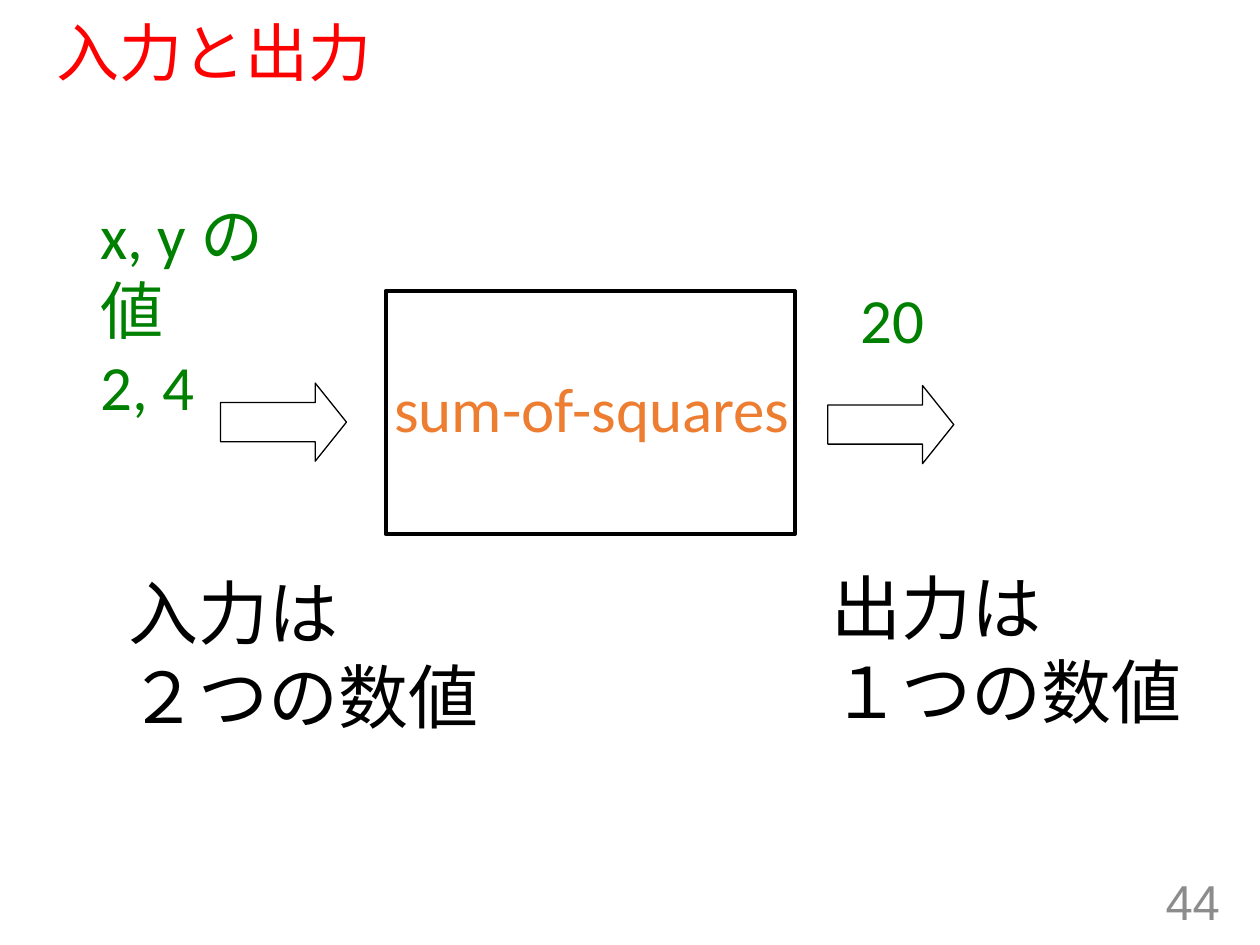
from pptx import Presentation
from pptx.util import Inches, Pt
from pptx.dml.color import RGBColor
from pptx.enum import shapes, text

BLACK = RGBColor(0x00, 0x00, 0x00)
RED = RGBColor(0xFF, 0x00, 0x00)
GREEN = RGBColor(0x00, 0x80, 0x00)
ORANGE = RGBColor(0xED, 0x7D, 0x31)
GRAY = RGBColor(0x8C, 0x8C, 0x8C)

# Content: lines, (left, top, width, height), size, colour, wrap
LABELS = [
    (["sum-of-squares"], (3.03, 2.88, 3.38, 0.71), 36, ORANGE, False),
    (["x, y の値", "2, 4"], (0.7, 1.51, 1.9, 1.3), 36, GREEN, True),
    (["20"], (6.73, 2.18, 0.71, 0.71), 36, GREEN, False),
    (["入力は", "２つの数値"], (0.92, 4.47, 3.01, 1.45), 40, BLACK, False),
    (["出力は", "１つの数値"], (6.5, 4.43, 3.01, 1.45), 40, BLACK, False),
]
TITLE = (["入力と出力"], (0.35, 0.19, 9.25, 0.51), 36, RED, True)
PAGE = (["44"], (7.53, 6.95, 2.25, 0.4), 28, GRAY, True)
FUNCTION_BOX = (3.06, 2.31, 3.25, 1.93)
ARROWS = [(1.75, 3.04, 1, 0.62), (6.57, 3.06, 1, 0.62)]


def add_outline(s, kind, box, width):
    sp = s.shapes.add_shape(kind, *map(Inches, box))
    sp.shadow.inherit = False
    sp.fill.background()
    sp.line.color.rgb = BLACK
    sp.line.width = Pt(width)
    return sp


def add_label(s, lines, box, size, color, wrap, font="Calibri"):
    tf = s.shapes.add_textbox(*map(Inches, box)).text_frame
    tf.word_wrap = wrap
    for i, line in enumerate(lines):
        p = tf.paragraphs[0] if i == 0 else tf.add_paragraph()
        r = p.add_run()
        r.text = line
        r.font.size = Pt(size)
        r.font.name = font
        r.font.color.rgb = color
    return tf


def main():
    prs = Presentation()
    prs.slide_width, prs.slide_height = Inches(10), Inches(7.5)
    s = prs.slides.add_slide(prs.slide_layouts[6])

    # Function box with an arrow in and an arrow out
    add_outline(s, shapes.MSO_SHAPE.RECTANGLE, FUNCTION_BOX, 2.25)
    for box in ARROWS:
        arrow = add_outline(s, shapes.MSO_SHAPE.RIGHT_ARROW, box, 0.75)
        arrow.adjustments[0] = 0.5
        arrow.adjustments[1] = 0.4

    # Values and captions
    for label in LABELS:
        add_label(s, *label)

    # Title and page number
    title = add_label(s, *TITLE, font="Arial")
    title.vertical_anchor = text.MSO_ANCHOR.MIDDLE
    title.paragraphs[0].line_spacing = 0.9
    page = add_label(s, *PAGE, font="Arial")
    page.vertical_anchor = text.MSO_ANCHOR.MIDDLE
    page.paragraphs[0].alignment = text.PP_ALIGN.RIGHT

    prs.save("out.pptx")


if __name__ == "__main__":
    main()
